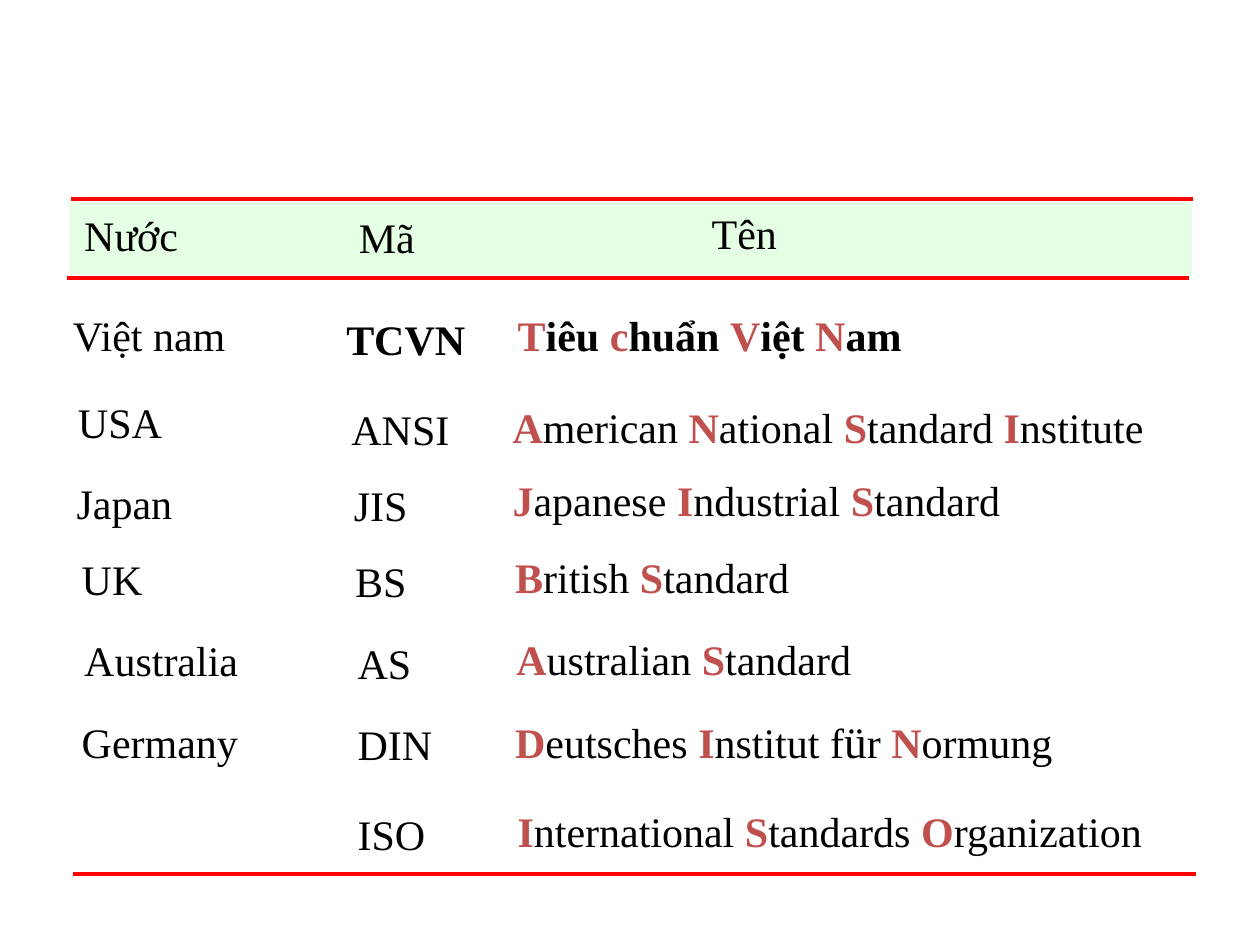
from lxml.etree import SubElement
from pptx import Presentation
from pptx.dml.color import RGBColor
from pptx.enum.shapes import MSO_CONNECTOR, MSO_SHAPE
from pptx.enum.text import MSO_AUTO_SIZE
from pptx.oxml.ns import qn
from pptx.util import Inches, Pt

COLS, ROWS = 100, 75
HEAD = [
    ("Nước", 5.7, 16.1, 9.6),
    ("Mã", 27.5, 16.3, 6.6),
    ("Tên", 55.5, 16, 7.2),
]
BODY = [
    ("Việt nam", 4.8, 24.1, 14.2),
    ("USA", 5.2, 31, 8.8),
    ("ANSI", 26.9, 31.5, 9.9),
    ("|A|merican |N|ational |S|tandard |I|nstitute", 39.7, 31.4, 52.5),
    ("Japan", 5.1, 37.4, 9.7),
    ("JIS", 27.1, 37.6, 6.3),
    ("|J|apanese |I|ndustrial |S|tandard", 39.7, 37.2, 41.1),
    ("UK", 5.5, 43.4, 6.9),
    ("BS", 27.2, 43.6, 6.1),
    ("|B|ritish |S|tandard", 39.9, 43.3, 24),
    ("Australia", 5.7, 49.9, 14.3),
    ("AS", 27.4, 50.1, 6.5),
    ("|A|ustralian |S|tandard", 40, 49.8, 28.8),
    ("Germany", 5.5, 56.4, 14.5),
    ("DIN", 27.4, 56.5, 8),
    ("|D|eutsches |I|nstitut f|ü|r |N|ormung", 39.9, 56.1, 45.1),
    ("ISO", 27.4, 63.7, 7.7),
    ("|I|nternational |S|tandards |O|rganization", 40.1, 63.4, 52),
]
BOLD = [
    ("TCVN", 26.5, 24.4, 11.6),
    ("|T|iêu |c|huẩn |V|iệt |N|am", 40.1, 24.1, 32.5),
]
RULES = [(5.6, 15.8), (5.3, 22.1), (5.8, 69.4)]


def tint(code):
    return RGBColor.from_string(code)


def write(para, text, font="Times New Roman", size=24, ink="000000",
          mark="C0504D", bold=False, large="ü", grown=26):
    for n, part in enumerate(text.split("|")):
        if not part:
            continue
        hot = n % 2 == 1 and part != large
        run = para.add_run()
        run.text = part
        run.font.name = font
        run.font.size = Pt(grown if part == large else size)
        run.font.bold = bold or hot
        run.font.color.rgb = tint(mark if hot else ink)


class Deck:
    rule = "FF0000"
    shade = "CCFFCC"
    weight = 2.25
    high = 5.1

    def __init__(self):
        self.show = Presentation()
        self.show.slide_width = Inches(10)
        self.show.slide_height = Inches(7.5)
        self.slide = self.show.slides.add_slide(self.show.slide_layouts[6])

    def x(self, col):
        return round(self.show.slide_width * col / COLS)

    def y(self, row):
        return round(self.show.slide_height * row / ROWS)

    def text(self, text, left, top, wide, **style):
        box = self.slide.shapes.add_textbox(
            self.x(left), self.y(top), self.x(wide), self.y(self.high))
        frame = box.text_frame
        frame.word_wrap = False
        frame.auto_size = MSO_AUTO_SIZE.SHAPE_TO_FIT_TEXT
        write(frame.paragraphs[0], text, **style)

    def band(self, left, top, wide, high, alpha=50):
        box = self.slide.shapes.add_shape(
            MSO_SHAPE.RECTANGLE, self.x(left), self.y(top),
            self.x(wide), self.y(high))
        box.shadow.inherit = False
        box.fill.solid()
        box.fill.fore_color.rgb = tint(self.shade)
        box.line.fill.background()
        color = box.element.spPr.find(f".//{qn('a:srgbClr')}")
        SubElement(color, qn("a:alpha"), val=str(alpha * 1000))

    def line(self, left, top, wide=89.1):
        line = self.slide.shapes.add_connector(
            MSO_CONNECTOR.STRAIGHT, self.x(left), self.y(top),
            self.x(left + wide), self.y(top))
        line.line.color.rgb = tint(self.rule)
        line.line.width = Pt(self.weight)
        SubElement(line._element.spPr, qn("a:effectLst"))


def main():
    deck = Deck()
    deck.band(5.5, 16, 89.1, 5.8)
    for left, top in RULES:
        deck.line(left, top)
    for cell in HEAD + BODY:
        deck.text(*cell)
    for cell in BOLD:
        deck.text(*cell, bold=True)
    deck.show.save("out.pptx")


if __name__ == "__main__":
    main()
